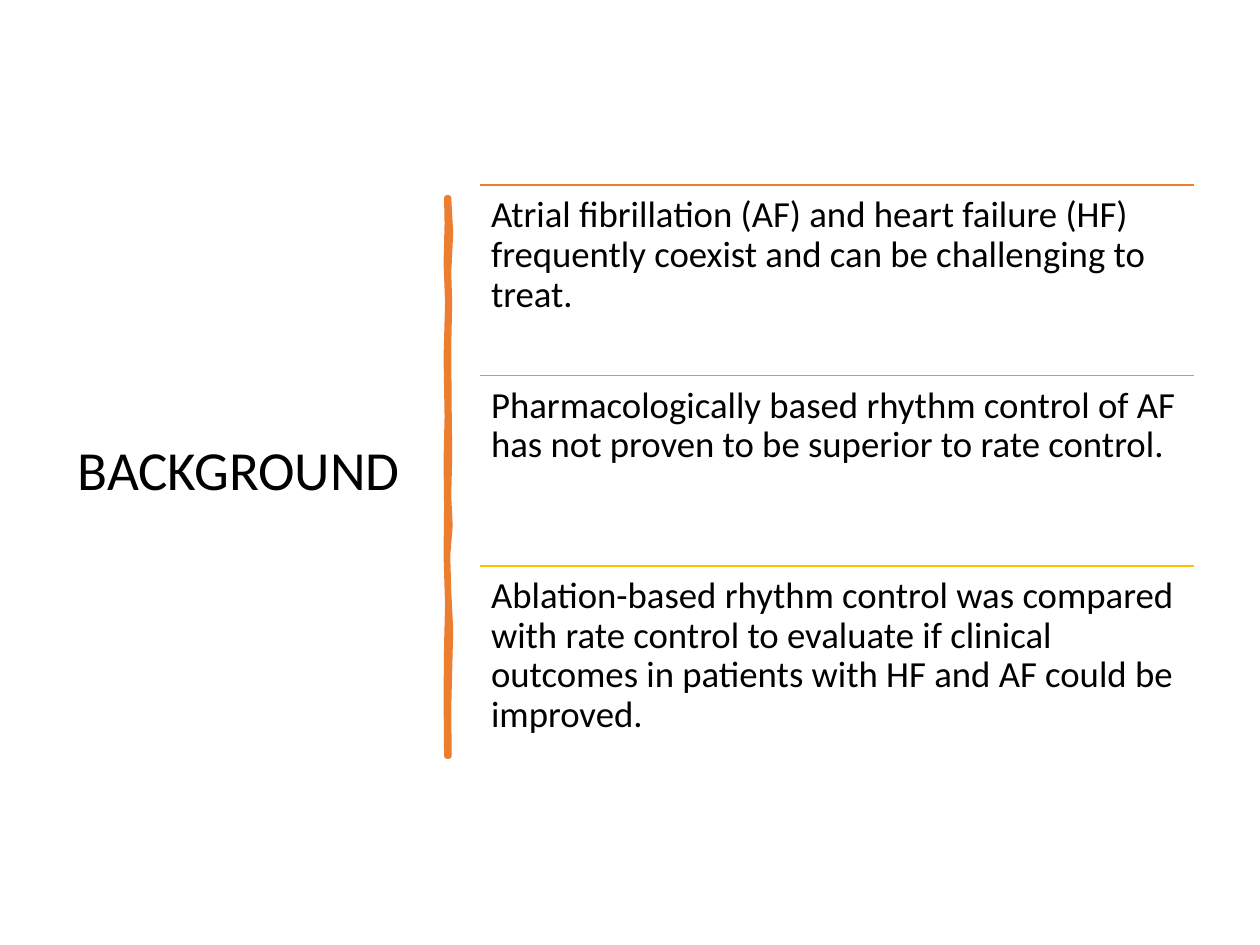
from pptx import Presentation
from pptx.dml.color import RGBColor
from pptx.enum.shapes import MSO_CONNECTOR
from pptx.enum.text import MSO_ANCHOR
from pptx.oxml.ns import qn
from pptx.util import Cm, Pt
from lxml import etree

LINE = MSO_CONNECTOR.STRAIGHT
TOP, MIDDLE = MSO_ANCHOR.TOP, MSO_ANCHOR.MIDDLE

BLACK = RGBColor(0x00, 0x00, 0x00)
ORANGE = RGBColor(0xED, 0x7D, 0x31)
GREY = RGBColor(0xA5, 0xA5, 0xA5)
GOLD = RGBColor(0xFF, 0xC0, 0x00)

FONT = "Calibri"

# Rows of the list
LEFT, START = 9.68, 3.73
WIDTH, STEP = 14.38, 3.84
ROWS = [
    (ORANGE, "Atrial fibrillation (AF) and heart failure (HF) frequently "
             "coexist and can be challenging to treat."),
    (GREY, "Pharmacologically based rhythm control of AF has not proven "
           "to be superior to rate control."),
    (GOLD, "Ablation-based rhythm control was compared with rate control to "
           "evaluate if clinical outcomes in patients with HF and AF could "
           "be improved."),
]

# Hand-drawn bar, as (x, y) in hundredths of a centimetre
RIGHT_EDGE = [(904, 399), (908, 470), (904, 550), (906, 610), (904, 700),
              (905, 830), (906, 920), (904, 1000), (907, 1060), (902, 1120),
              (904, 1190), (908, 1270), (906, 1350), (904, 1430), (905, 1524)]
LEFT_EDGE = [(901, 1524), (900, 1400), (901, 1300), (903, 1220), (900, 1120),
             (901, 1020), (900, 930), (902, 840), (900, 720), (903, 610),
             (900, 530), (902, 450), (901, 399)]


def add_text(slide, text, box, size, anchor, inset):
    frame = slide.shapes.add_textbox(*map(Cm, box)).text_frame
    frame.word_wrap = True
    frame.vertical_anchor = anchor
    frame.margin_left = frame.margin_right = Cm(inset)
    frame.margin_top = frame.margin_bottom = Cm(inset)
    para = frame.paragraphs[0]
    para.text = text
    para.line_spacing = 0.9
    para.font.name = FONT
    para.font.size = Pt(size)
    para.font.color.rgb = BLACK


def add_rule(slide, top, color):
    rule = slide.shapes.add_connector(
        LINE, Cm(LEFT), Cm(top), Cm(LEFT + WIDTH), Cm(top))
    rule.line.color.rgb = color
    rule.line.width = Pt(1)
    etree.SubElement(rule.line._get_or_add_ln().getparent(),
                     qn("a:effectLst"))


def add_bar(slide):
    first, *rest = RIGHT_EDGE + LEFT_EDGE
    pen = slide.shapes.build_freeform(*first, scale=Cm(0.01))
    pen.add_line_segments(rest, close=True)
    bar = pen.convert_to_shape()
    bar.shadow.inherit = False
    bar.fill.solid()
    bar.fill.fore_color.rgb = ORANGE
    bar.line.color.rgb = ORANGE
    bar.line.width = Pt(3.25)


def main():
    deck = Presentation()
    deck.slide_width, deck.slide_height = Cm(25.4), Cm(19.05)
    slide = deck.slides.add_slide(deck.slide_layouts[6])

    # Title and divider
    add_text(slide, "BACKGROUND", (1.32, 3.71, 7.11, 11.63), 31.5, MIDDLE,
             0.25)
    add_bar(slide)

    # Ruled list
    for row, (color, text) in enumerate(ROWS):
        top = START + row * STEP
        add_rule(slide, top, color)
        add_text(slide, text, (LEFT, top, WIDTH, STEP), 21, TOP, 0.22)

    deck.save("out.pptx")


if __name__ == "__main__":
    main()
